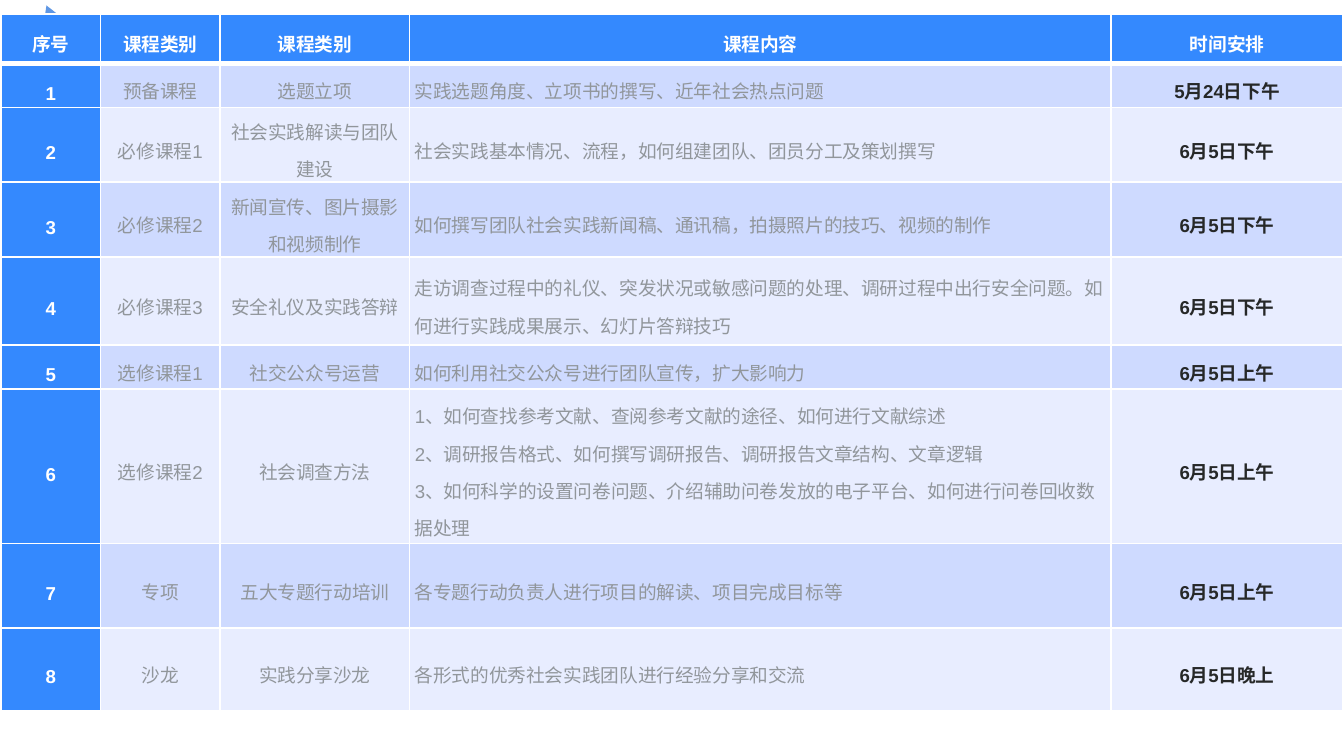
from dataclasses import dataclass

import pptx
import pptx.dml.color
import pptx.enum.shapes
import pptx.enum.text
import pptx.oxml
import pptx.oxml.ns
import pptx.util
from pptx.util import Cm, Pt

ALIGN = pptx.enum.text.PP_ALIGN


@dataclass(frozen=True)
class Theme:
    font: str = "Arial"
    size: int = 10
    line_spacing: int = 20
    accent: str = "3489FE"
    triangle: str = "5F97E4"
    bands: tuple[str, str] = ("CEDAFF", "E8EDFF")
    white: str = "FFFFFF"
    muted: str = "91969B"
    dark: str = "262828"
    border: int = 1
    header_border: int = 3


@dataclass(frozen=True)
class Course:
    category: str
    topic: str
    content: str
    time: str
    height: float


@dataclass(frozen=True)
class CellStyle:
    fill: str
    color: str
    bold: bool
    align: ALIGN = ALIGN.CENTER


THEME = Theme()
HEADERS = ("序号", "课程类别", "课程类别", "课程内容", "时间安排")
COLUMN_WIDTHS = (1.88, 2.26, 3.58, 13.26, 4.38)
HEADER_HEIGHT = 0.94
COURSES = (
    Course("预备课程", "选题立项", "实践选题角度、立项书的撰写、近年社会热点问题", "5月24日下午", 0.83),
    Course("必修课程1", "社会实践解读与团队建设",
           "社会实践基本情况、流程，如何组建团队、团员分工及策划撰写", "6月5日下午", 1.38),
    Course("必修课程2", "新闻宣传、图片摄影和视频制作",
           "如何撰写团队社会实践新闻稿、通讯稿，拍摄照片的技巧、视频的制作", "6月5日下午", 1.38),
    Course("必修课程3", "安全礼仪及实践答辩",
           "走访调查过程中的礼仪、突发状况或敏感问题的处理、调研过程中出行安全问题。"
           "如何进行实践成果展示、幻灯片答辩技巧", "6月5日下午", 1.67),
    Course("选修课程1", "社交公众号运营", "如何利用社交公众号进行团队宣传，扩大影响力", "6月5日上午", 0.83),
    Course("选修课程2", "社会调查方法",
           "1、如何查找参考文献、查阅参考文献的途径、如何进行文献综述\n"
           "2、调研报告格式、如何撰写调研报告、调研报告文章结构、文章逻辑\n"
           "3、如何科学的设置问卷问题、介绍辅助问卷发放的电子平台、如何进行问卷回收数据处理",
           "6月5日上午", 2.92),
    Course("专项", "五大专题行动培训", "各专题行动负责人进行项目的解读、项目完成目标等", "6月5日上午", 1.6),
    Course("沙龙", "实践分享沙龙", "各形式的优秀社会实践团队进行经验分享和交流", "6月5日晚上", 1.55),
)


def rgb(value: str) -> pptx.dml.color.RGBColor:
    return pptx.dml.color.RGBColor.from_string(value)


def set_borders(cell, top: int, bottom: int) -> None:
    """Add white borders; call before the fill, which must follow them."""
    properties = cell._tc.get_or_add_tcPr()
    widths = {"lnL": THEME.border, "lnR": THEME.border, "lnT": top, "lnB": bottom}
    for tag, width in widths.items():
        properties.append(pptx.oxml.parse_xml(
            f'<a:{tag} {pptx.oxml.ns.nsdecls("a")} w="{Pt(width)}"><a:solidFill>'
            f'<a:srgbClr val="{THEME.white}"/></a:solidFill></a:{tag}>'))


def write_cell(cell, text: str, style: CellStyle) -> None:
    cell.fill.solid()
    cell.fill.fore_color.rgb = rgb(style.fill)
    cell.vertical_anchor = pptx.enum.text.MSO_ANCHOR.MIDDLE
    cell.margin_left = cell.margin_right = Cm(0.1)
    cell.margin_top = cell.margin_bottom = 0
    cell.text_frame.text = text
    for para in cell.text_frame.paragraphs:
        para.alignment = style.align
        para.line_spacing = Pt(THEME.line_spacing)
        para.font.name = THEME.font
        para.font.size = Pt(THEME.size)
        para.font.bold = style.bold
        para.font.color.rgb = rgb(style.color)


def add_corner_triangle(page) -> None:
    triangle = page.shapes.add_shape(
        pptx.enum.shapes.MSO_SHAPE.ISOSCELES_TRIANGLE,
        Cm(0.28), Cm(0.05), Cm(1.75), Cm(1.5))
    triangle.rotation = 338.4
    triangle.shadow.inherit = False
    triangle.fill.solid()
    triangle.fill.fore_color.rgb = rgb(THEME.triangle)
    triangle.line.fill.background()


def add_schedule(page) -> None:
    heights = [HEADER_HEIGHT] + [course.height for course in COURSES]
    table = page.shapes.add_table(
        len(heights), len(HEADERS), Cm(0.02), Cm(0.26),
        Cm(sum(COLUMN_WIDTHS)), Cm(sum(heights))).table
    for column, width in zip(table.columns, COLUMN_WIDTHS):
        column.width = Cm(width)
    for row, height in zip(table.rows, heights):
        row.height = Cm(height)

    heading = CellStyle(THEME.accent, THEME.white, True)
    rows = [(HEADERS, [heading] * len(HEADERS))]
    for index, course in enumerate(COURSES):
        band = THEME.bands[index % 2]
        label = CellStyle(band, THEME.muted, False)
        body = CellStyle(band, THEME.muted, False, ALIGN.LEFT)
        time = CellStyle(band, THEME.dark, True)
        texts = (str(index + 1), course.category, course.topic, course.content, course.time)
        rows.append((texts, [heading, label, label, body, time]))

    for row_index, (texts, styles) in enumerate(rows):
        top = THEME.header_border if row_index == 1 else THEME.border
        bottom = THEME.header_border if row_index == 0 else THEME.border
        for column_index, (text, style) in enumerate(zip(texts, styles)):
            cell = table.cell(row_index, column_index)
            set_borders(cell, top, bottom)
            write_cell(cell, text, style)


def main() -> None:
    deck = pptx.Presentation()
    deck.slide_width, deck.slide_height = Cm(25.4), Cm(14.29)
    page = deck.slides.add_slide(deck.slide_layouts[6])
    add_corner_triangle(page)
    add_schedule(page)
    deck.save("out.pptx")


if __name__ == "__main__":
    main()
